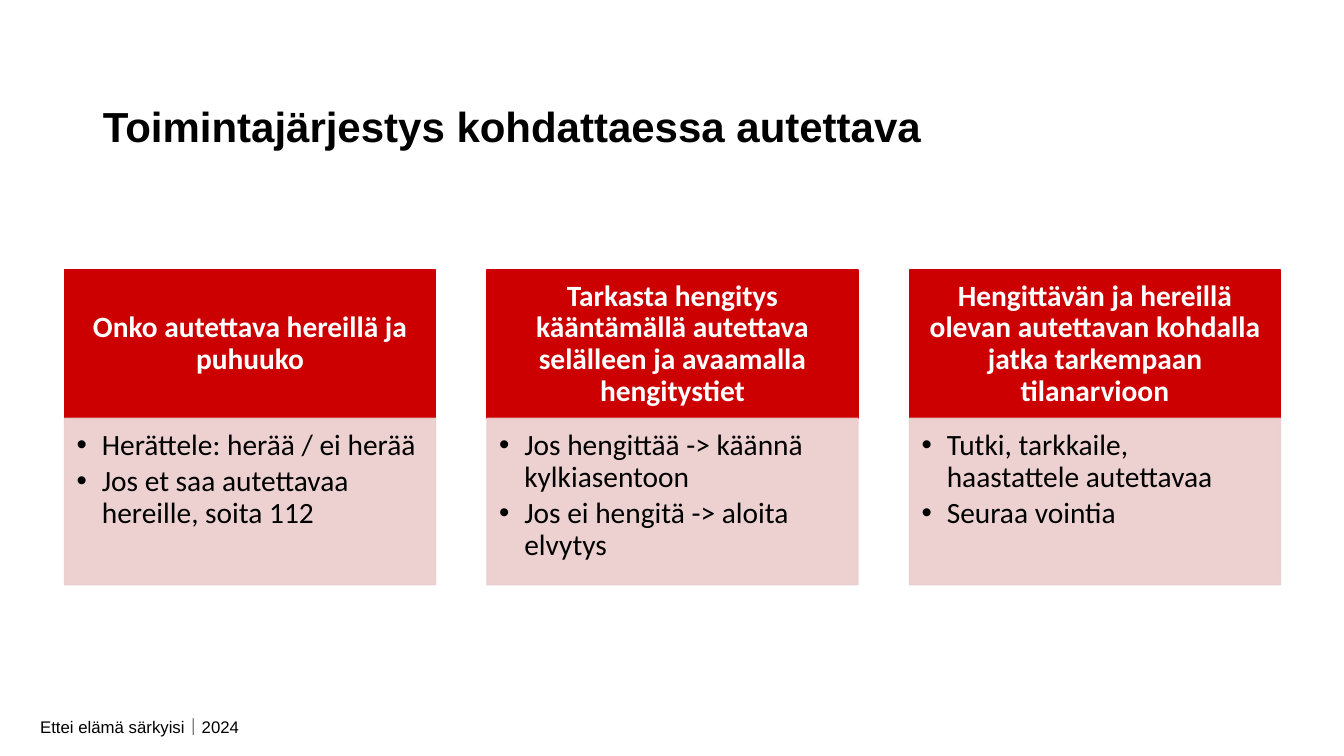
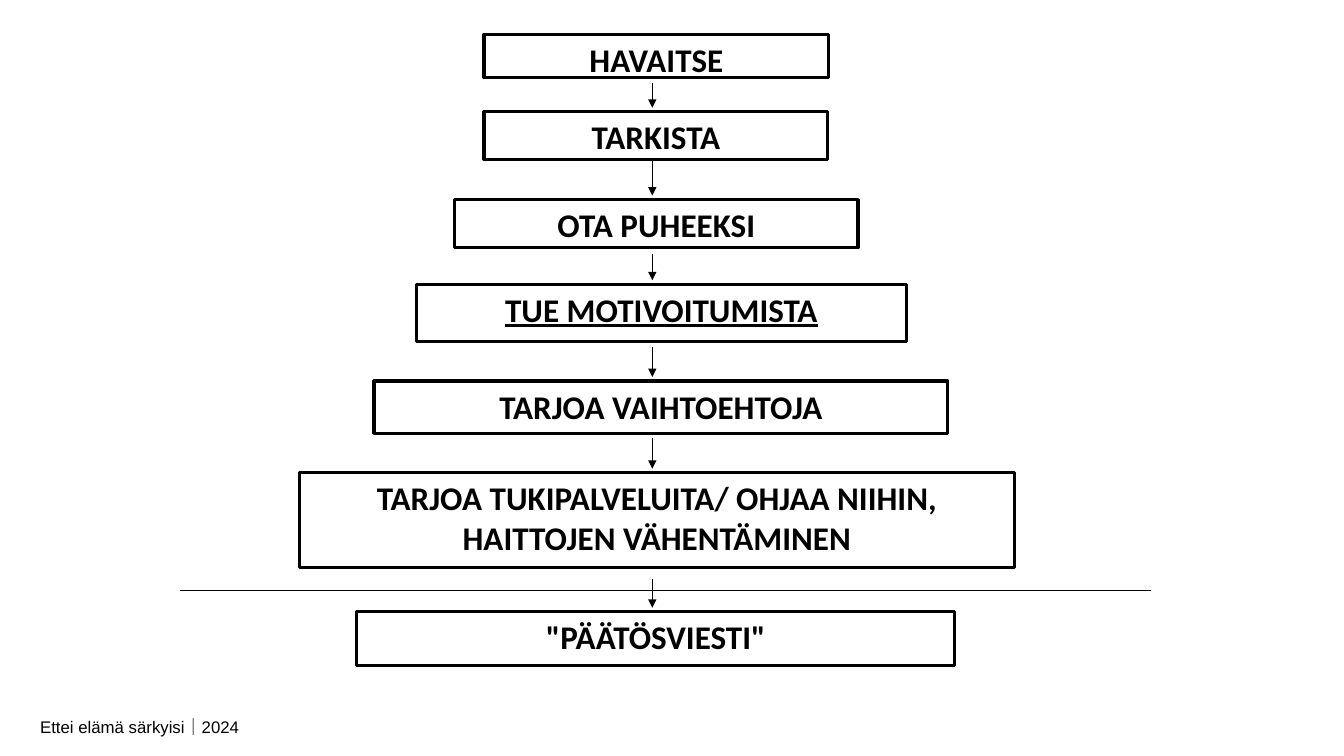
from dataclasses import dataclass

from lxml import etree
from pptx import Presentation
from pptx.dml.color import RGBColor
from pptx.enum.shapes import MSO_CONNECTOR, MSO_SHAPE
from pptx.enum.text import MSO_ANCHOR, MSO_AUTO_SIZE, PP_ALIGN
from pptx.oxml.ns import qn
from pptx.util import Inches, Pt

RECTANGLE = MSO_SHAPE.RECTANGLE
STRAIGHT = MSO_CONNECTOR.STRAIGHT
TOP, MIDDLE = MSO_ANCHOR.TOP, MSO_ANCHOR.MIDDLE
LEFT, CENTER = PP_ALIGN.LEFT, PP_ALIGN.CENTER
NO_AUTOFIT = MSO_AUTO_SIZE.NONE
TITLE_ONLY, BLANK = 5, 6


@dataclass(frozen=True)
class Theme:
    black: RGBColor = RGBColor(0x00, 0x00, 0x00)
    white: RGBColor = RGBColor(0xFF, 0xFF, 0xFF)
    red: RGBColor = RGBColor(0xCC, 0x00, 0x00)
    pink: RGBColor = RGBColor(0xEC, 0xCC, 0xCC)
    pink_opacity: int = 90
    heading_font: str = "Arial"
    body_font: str = "Calibri"
    title_size: float = 30
    card_size: float = 21
    step_size: float = 23.6
    footer_size: float = 12
    card_line: float = 1
    step_line: float = 2.25
    arrow_line: float = 0.75


THEME = Theme()

FOOTER = "Ettei elämä särkyisi｜2024"
TITLE = "Toimintajärjestys kohdattaessa autettava"

CARDS = [
    ("Onko autettava hereillä ja puhuuko",
     ["Herättele: herää / ei herää",
      "Jos et saa autettavaa hereille, soita 112"]),
    ("Tarkasta hengitys kääntämällä autettava selälleen ja avaamalla hengitystiet",
     ["Jos hengittää -> käännä kylkiasentoon",
      "Jos ei hengitä -> aloita elvytys"]),
    ("Hengittävän ja hereillä olevan autettavan kohdalla jatka tarkempaan tilanarvioon",
     ["Tutki, tarkkaile, haastattele autettavaa",
      "Seuraa vointia"]),
]

# Text, left, top, width, height, gap before the next arrow, underlined
STEPS = [
    ("HAVAITSE", 3.01, 0, 3.42, 0.43, 0.05, False),
    ("TARKISTA", 3.01, 0.77, 3.41, 0.47, 0.02, False),
    ("OTA PUHEEKSI", 2.72, 1.64, 4, 0.48, 0.06, False),
    ("TUE MOTIVOITUMISTA", 2.34, 2.48, 4.86, 0.57, 0.05, True),
    ("TARJOA VAIHTOEHTOJA", 1.92, 3.44, 5.69, 0.52, 0.05, False),
    ("TARJOA TUKIPALVELUITA/ OHJAA NIIHIN, HAITTOJEN VÄHENTÄMINEN",
     1.18, 4.35, 7.09, 0.94, 0.11, False),
    ('"PÄÄTÖSVIESTI"', 1.75, 5.73, 5.93, 0.53, 0, False),
]


def style_font(font, name, size, color, bold=False):
    font.name, font.size, font.bold = name, Pt(size), bold
    font.color.rgb = color


def set_frame(frame, anchor, margins):
    """Margins run left, top, right, bottom, in inches."""
    frame.word_wrap = True
    frame.auto_size = NO_AUTOFIT
    frame.vertical_anchor = anchor
    (frame.margin_left, frame.margin_top,
     frame.margin_right, frame.margin_bottom) = map(Inches, margins)


def add_box(page, box, fill, line, line_width):
    shape = page.shapes.add_shape(RECTANGLE, *map(Inches, box))
    shape.shadow.inherit = False
    shape.fill.solid()
    shape.fill.fore_color.rgb = fill
    shape.line.color.rgb = line
    shape.line.width = Pt(line_width)
    return shape


def set_opacity(shape, percent):
    """Apply to both the fill and the line."""
    for color in shape.element.spPr.iter(qn("a:srgbClr")):
        etree.SubElement(color, qn("a:alpha"), val=str(percent * 1000))


def add_bullet(para, indent):
    properties = para._p.get_or_add_pPr()
    properties.set("marL", str(Inches(indent)))
    properties.set("indent", str(-Inches(indent)))
    etree.SubElement(properties, qn("a:buFont"), typeface="Arial")
    etree.SubElement(properties, qn("a:buChar"), char="•")


def add_line(page, start, end, arrow=False):
    line = page.shapes.add_connector(STRAIGHT, *map(Inches, (*start, *end)))
    line.line.color.rgb = THEME.black
    line.line.width = Pt(THEME.arrow_line)
    properties = line.element.spPr
    if arrow:
        etree.SubElement(properties.find(qn("a:ln")), qn("a:tailEnd"), type="triangle")
    etree.SubElement(properties, qn("a:effectLst"))


def add_footer(page, box):
    frame = page.shapes.add_textbox(*map(Inches, box)).text_frame
    set_frame(frame, TOP, (0.1, 0.05, 0.1, 0.05))
    para = frame.paragraphs[0]
    para.text = FOOTER
    style_font(para.font, THEME.heading_font, THEME.footer_size, THEME.black)


def new_page(deck, layout):
    page = deck.slides.add_slide(deck.slide_layouts[layout])
    add_footer(page, (0.3, 7.06, 4.65, 0.3))
    return page


def set_title(page, text, box):
    title = page.shapes.title
    title.left, title.top, title.width, title.height = map(Inches, box)
    set_frame(title.text_frame, MIDDLE, (0.1, 0.05, 0.1, 0.05))
    para = title.text_frame.paragraphs[0]
    para.text = text
    para.alignment = LEFT
    style_font(para.font, THEME.heading_font, THEME.title_size, THEME.black, True)


def add_card(page, box, heading, points):
    left, top, width, height = box
    head_height = 1.47

    head = add_box(page, (left, top, width, head_height),
                   THEME.red, THEME.red, THEME.card_line)
    set_frame(head.text_frame, MIDDLE, (0.16, 0.09, 0.16, 0.09))
    para = head.text_frame.paragraphs[0]
    para.text = heading
    para.alignment = CENTER
    para.line_spacing = 0.9
    style_font(para.font, THEME.body_font, THEME.card_size, THEME.white, True)

    body = add_box(page, (left, top + head_height, width, height - head_height),
                   THEME.pink, THEME.pink, THEME.card_line)
    set_opacity(body, THEME.pink_opacity)
    frame = body.text_frame
    set_frame(frame, TOP, (0.12, 0.12, 0.16, 0.18))
    for index, point in enumerate(points):
        para = frame.add_paragraph() if index else frame.paragraphs[0]
        para.text = point
        para.alignment = LEFT
        para.line_spacing = 0.9
        para.space_after = Pt(3)
        add_bullet(para, 0.25)
        style_font(para.font, THEME.body_font, THEME.card_size, THEME.black)


def add_card_row(page, box, cards, gap):
    left, top, width, height = box
    card_width = (width - gap * (len(cards) - 1)) / len(cards)
    for index, (heading, points) in enumerate(cards):
        card_left = left + index * (card_width + gap)
        add_card(page, (card_left, top, card_width, height), heading, points)


def add_step(page, box, text, underlined):
    step = add_box(page, box, THEME.white, THEME.black, THEME.step_line)
    set_frame(step.text_frame, TOP, (0.09, 0.05, 0.09, 0.05))
    para = step.text_frame.paragraphs[0]
    para.text = text
    para.alignment = CENTER
    style_font(para.font, THEME.body_font, THEME.step_size, THEME.black, True)
    if underlined:
        para.font.underline = True


def add_flow(page, box, steps):
    """Stack the steps, join them with arrows and rule off the last one."""
    flow_left, flow_top, flow_width, _ = box
    arrow_x = flow_left + 4.68
    arrow_start = None
    for text, left, top, width, height, gap, underlined in steps:
        step_top = flow_top + top
        add_step(page, (flow_left + left, step_top, width, height), text, underlined)
        if arrow_start is not None:
            add_line(page, (arrow_x, arrow_start), (arrow_x, step_top - 0.04), arrow=True)
        arrow_start = step_top + height + gap
    rule_y = step_top - 0.21
    add_line(page, (flow_left, rule_y), (flow_left + flow_width, rule_y))


def build_cards_page(deck):
    page = new_page(deck, TITLE_ONLY)
    set_title(page, TITLE, (0.92, 0.82, 11.5, 0.85))
    add_card_row(page, (0.64, 2.68, 12.06, 3.12), CARDS, gap=0.51)


def build_flow_page(deck):
    page = new_page(deck, BLANK)
    add_flow(page, (1.79, 0.34, 9.63, 6.26), STEPS)


def main():
    deck = Presentation()
    deck.slide_width, deck.slide_height = Inches(13.33), Inches(7.5)
    build_cards_page(deck)
    build_flow_page(deck)
    deck.save("out.pptx")


if __name__ == "__main__":
    main()
